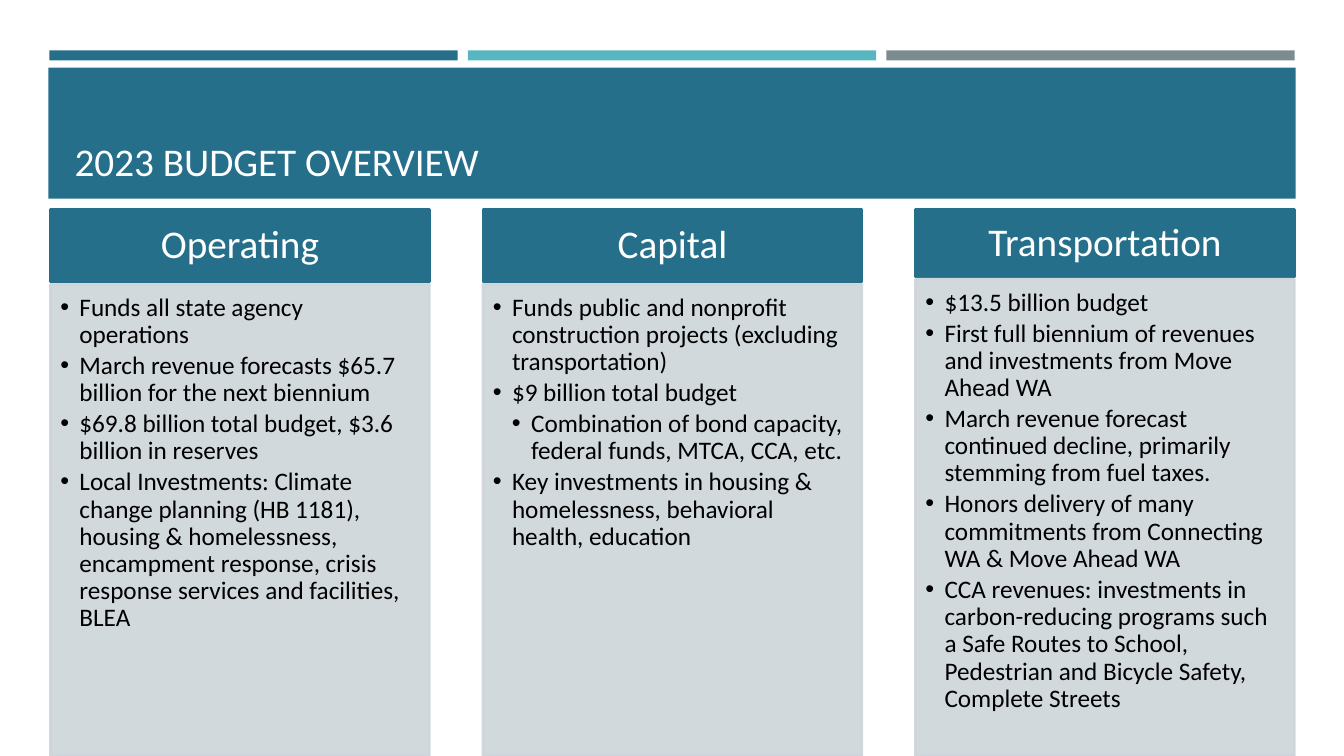
"""Build the 2023 budget overview slide."""
from dataclasses import dataclass

from lxml.etree import SubElement
from pptx import Presentation
from pptx.dml.color import RGBColor
from pptx.enum.shapes import MSO_SHAPE
from pptx.enum.text import MSO_ANCHOR, MSO_AUTO_SIZE, PP_ALIGN
from pptx.oxml.ns import qn
from pptx.shapes.autoshape import Shape
from pptx.slide import Slide
from pptx.util import Inches, Pt

FONT = "Calibri"
COLORS = {
    "teal": "266F8B",
    "aqua": "58B6C0",
    "gray": "7A8C8E",
    "panel": "CDD5DA",
    "white": "FFFFFF",
    "black": "000000",
}
SLIDE_WIDTH, SLIDE_HEIGHT = 13.33, 7.5
STRIPE_LEFT, STRIPE_PITCH = 0.49, 4.15
COLUMN_LEFT, COLUMN_PITCH, COLUMN_WIDTH = 0.5, 4.29, 3.76
COLUMN_TOP, HEADER_GAP = 2.08, 0.02
BULLET_INDENT = 0.19


@dataclass(frozen=True)
class Bullet:
    """One bullet and its depth."""

    text: str
    depth: int = 1


@dataclass(frozen=True)
class Column:
    """One budget with its header height and bullets."""

    heading: str
    header_height: float
    bullets: tuple[Bullet, ...]


COLUMNS = (
    Column("Operating", 0.72, (
        Bullet("Funds all state agency operations"),
        Bullet("March revenue forecasts $65.7 billion for the next biennium"),
        Bullet("$69.8 billion total budget, $3.6 billion in reserves"),
        Bullet("Local Investments: Climate change planning (HB 1181), housing & "
               "homelessness, encampment response, crisis response services and "
               "facilities, BLEA"),
    )),
    Column("Capital", 0.72, (
        Bullet("Funds public and nonprofit construction projects "
               "(excluding transportation)"),
        Bullet("$9 billion total budget"),
        Bullet("Combination of bond capacity, federal funds, MTCA, CCA, etc.", 2),
        Bullet("Key investments in housing & homelessness, behavioral health, "
               "education"),
    )),
    Column("Transportation", 0.67, (
        Bullet("$13.5 billion budget"),
        Bullet("First full biennium of revenues and investments from Move Ahead WA"),
        Bullet("March revenue forecast continued decline, primarily stemming from "
               "fuel taxes."),
        Bullet("Honors delivery of many commitments from Connecting WA & "
               "Move Ahead WA"),
        Bullet("CCA revenues: investments in carbon-reducing programs such a Safe "
               "Routes to School, Pedestrian and Bicycle Safety, Complete Streets"),
    )),
)


def add_block(page: Slide, left: float, top: float, width: float, height: float,
              color: str, outlined: bool = False) -> Shape:
    """Add a flat rectangle, with an outline of its own color if asked."""
    box = page.shapes.add_shape(MSO_SHAPE.RECTANGLE, Inches(left), Inches(top),
                                Inches(width), Inches(height))
    box.shadow.inherit = False
    box.fill.solid()
    box.fill.fore_color.rgb = RGBColor.from_string(COLORS[color])
    if outlined:
        box.line.color.rgb = RGBColor.from_string(COLORS[color])
        box.line.width = Pt(1.75)
    else:
        box.line.fill.background()
    return box


def set_frame(box: Shape, anchor: MSO_ANCHOR, left: float, top: float,
              right: float, bottom: float) -> None:
    """Set the anchor, wrapping and margins of a text frame."""
    frame = box.text_frame
    frame.word_wrap = True
    frame.auto_size = MSO_AUTO_SIZE.NONE
    frame.vertical_anchor = anchor
    frame.margin_left, frame.margin_top = Inches(left), Inches(top)
    frame.margin_right, frame.margin_bottom = Inches(right), Inches(bottom)


def add_span(para, text: str, size: float, color: str) -> None:
    """Add one formatted run to a paragraph."""
    span = para.add_run()
    span.text = text
    span.font.name = FONT
    span.font.size = Pt(size)
    span.font.color.rgb = RGBColor.from_string(COLORS[color])


def add_bullet(para, bullet: Bullet) -> None:
    """Fill a paragraph as a bullet at its depth."""
    para.level = bullet.depth
    para.alignment = PP_ALIGN.LEFT
    para.line_spacing = 0.9
    para.space_after = Pt(2.7)
    add_span(para, bullet.text, 18, "black")
    properties = para._p.get_or_add_pPr()
    properties.set("marL", str(Inches(BULLET_INDENT * bullet.depth)))
    properties.set("indent", str(-Inches(BULLET_INDENT)))
    SubElement(properties, qn("a:buFont"), typeface="Arial")
    SubElement(properties, qn("a:buChar"), char="•")


def add_column(page: Slide, column: Column, left: float) -> None:
    """Draw a header and the bullet panel below it."""
    header = add_block(page, left, COLUMN_TOP, COLUMN_WIDTH, column.header_height,
                       "teal", outlined=True)
    set_frame(header, MSO_ANCHOR.MIDDLE, 0.2, 0.11, 0.2, 0.11)
    para = header.text_frame.paragraphs[0]
    para.alignment = PP_ALIGN.CENTER
    para.line_spacing = 0.9
    add_span(para, column.heading, 28, "white")

    top = COLUMN_TOP + column.header_height + HEADER_GAP
    panel = add_block(page, left, top, COLUMN_WIDTH, SLIDE_HEIGHT - top,
                      "panel", outlined=True)
    for color in panel.element.spPr.iter(qn("a:srgbClr")):
        SubElement(color, qn("a:alpha"), val="90000")
    set_frame(panel, MSO_ANCHOR.TOP, 0.1, 0.1, 0.14, 0.16)
    frame = panel.text_frame
    for index, bullet in enumerate(column.bullets):
        add_bullet(frame.add_paragraph() if index else frame.paragraphs[0], bullet)


def place_title(page: Slide, text: str) -> None:
    """Format the title placeholder and bring it to the front."""
    title = page.shapes.title
    title.left, title.top = Inches(0.64), Inches(0.77)
    title.width, title.height = Inches(12.06), Inches(1.11)
    set_frame(title, MSO_ANCHOR.BOTTOM, 0.1, 0.05, 0.1, 0.05)
    para = title.text_frame.paragraphs[0]
    para.alignment = PP_ALIGN.LEFT
    add_span(para, text, 28, "white")
    title.element.getparent().append(title.element)


def main() -> None:
    """Build and save the deck."""
    deck = Presentation()
    deck.slide_width, deck.slide_height = Inches(SLIDE_WIDTH), Inches(SLIDE_HEIGHT)
    page = deck.slides.add_slide(deck.slide_layouts[5])
    for index, color in enumerate(("teal", "aqua", "gray")):
        add_block(page, STRIPE_LEFT + index * STRIPE_PITCH, 0.5, 4.05, 0.1, color)
    add_block(page, 0.48, 0.67, 12.37, 1.3, "teal")
    for index, column in enumerate(COLUMNS):
        add_column(page, column, COLUMN_LEFT + index * COLUMN_PITCH)
    place_title(page, "2023 BUDGET OVERVIEW")
    deck.save("out.pptx")


if __name__ == "__main__":
    main()
